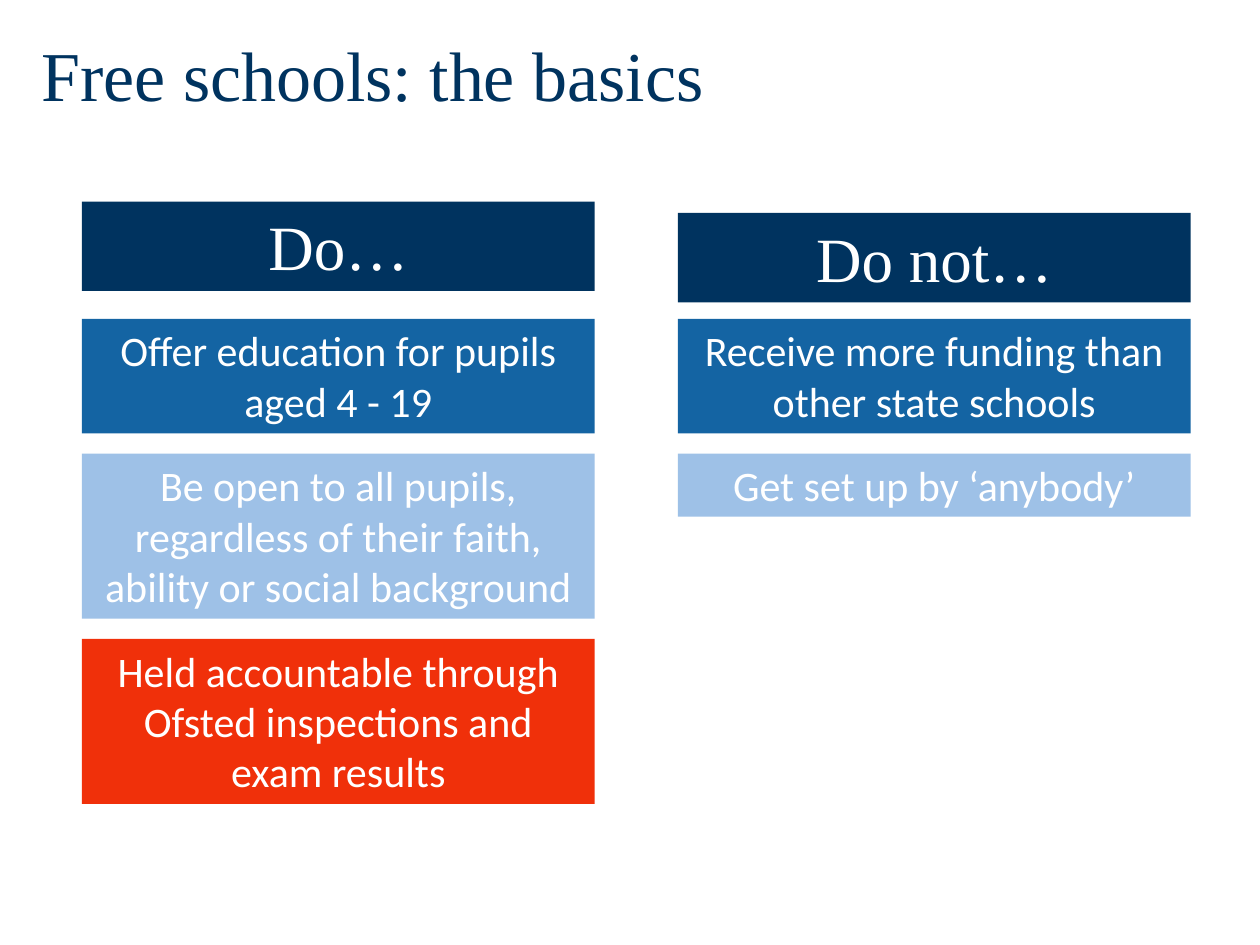
from pptx import Presentation
from pptx.dml.color import RGBColor
from pptx.enum.shapes import MSO_SHAPE as Shape
from pptx.enum.text import MSO_ANCHOR as Anchor, MSO_AUTO_SIZE as AutoSize, PP_ALIGN as Align
from pptx.util import Inches, Pt

NAVY, BLUE, PALE, RED, WHITE = "00335F", "1464A3", "9EC1E7", "F0300A", "FFFFFF"
SERIF, SANS = "Times New Roman", "Calibri"
COLUMN_WIDTH = 4.07
HEADER_HEIGHT = 0.71
CARDS_TOP = 2.53
CARD_GAP = 0.16
CARD_HEIGHTS = {1: 0.5, 2: 0.91, 3: 1.31}  # by number of text lines


def color(value):
    return RGBColor.from_string(value)


def add_span(para, text, size, font, shade):
    span = para.add_run()
    span.text = text
    span.font.size = Pt(size)
    span.font.name = font
    span.font.color.rgb = color(shade)


def add_title(page, left, top, width, height, text):
    box = page.shapes.add_textbox(Inches(left), Inches(top), Inches(width), Inches(height))
    box.text_frame.word_wrap = True
    para = box.text_frame.paragraphs[0]
    para.line_spacing = 0.9
    add_span(para, text, 40, SERIF, NAVY)


def add_card(page, left, top, width, height, text, fill, size=24, font=SANS):
    card = page.shapes.add_shape(
        Shape.RECTANGLE, Inches(left), Inches(top), Inches(width), Inches(height))
    card.shadow.inherit = False
    card.fill.solid()
    card.fill.fore_color.rgb = color(fill)
    card.line.fill.background()
    frame = card.text_frame
    frame.word_wrap = True
    frame.auto_size = AutoSize.SHAPE_TO_FIT_TEXT
    frame.vertical_anchor = Anchor.TOP
    para = frame.paragraphs[0]
    para.alignment = Align.CENTER
    add_span(para, text, size, font, WHITE)


def add_column(page, left, header_top, width, header, cards):
    add_card(page, left, header_top, width, HEADER_HEIGHT, header, NAVY, 36, SERIF)
    top = CARDS_TOP
    for (text, lines), fill in zip(cards, (BLUE, PALE, RED)):
        height = CARD_HEIGHTS[lines]
        add_card(page, left, top, width, height, text, fill)
        top += height + CARD_GAP


def main():
    deck = Presentation()
    deck.slide_width, deck.slide_height = Inches(10), Inches(7.5)
    page = deck.slides.add_slide(deck.slide_layouts[6])

    # Title
    add_title(page, 0.23, 0.28, 9.45, 0.9, "Free schools: the basics")

    # What free schools do
    add_column(page, 0.65, 1.6, COLUMN_WIDTH, "Do…", [
        ("Offer education for pupils aged 4 - 19", 2),
        ("Be open to all pupils, regardless of their faith, ability or social background", 3),
        ("Held accountable through Ofsted inspections and exam results", 3),
    ])

    # What free schools do not do
    add_column(page, 5.38, 1.69, COLUMN_WIDTH, "Do not…", [
        ("Receive more funding than other state schools", 2),
        ("Get set up by ‘anybody’", 1),
    ])

    deck.save("out.pptx")


if __name__ == "__main__":
    main()
